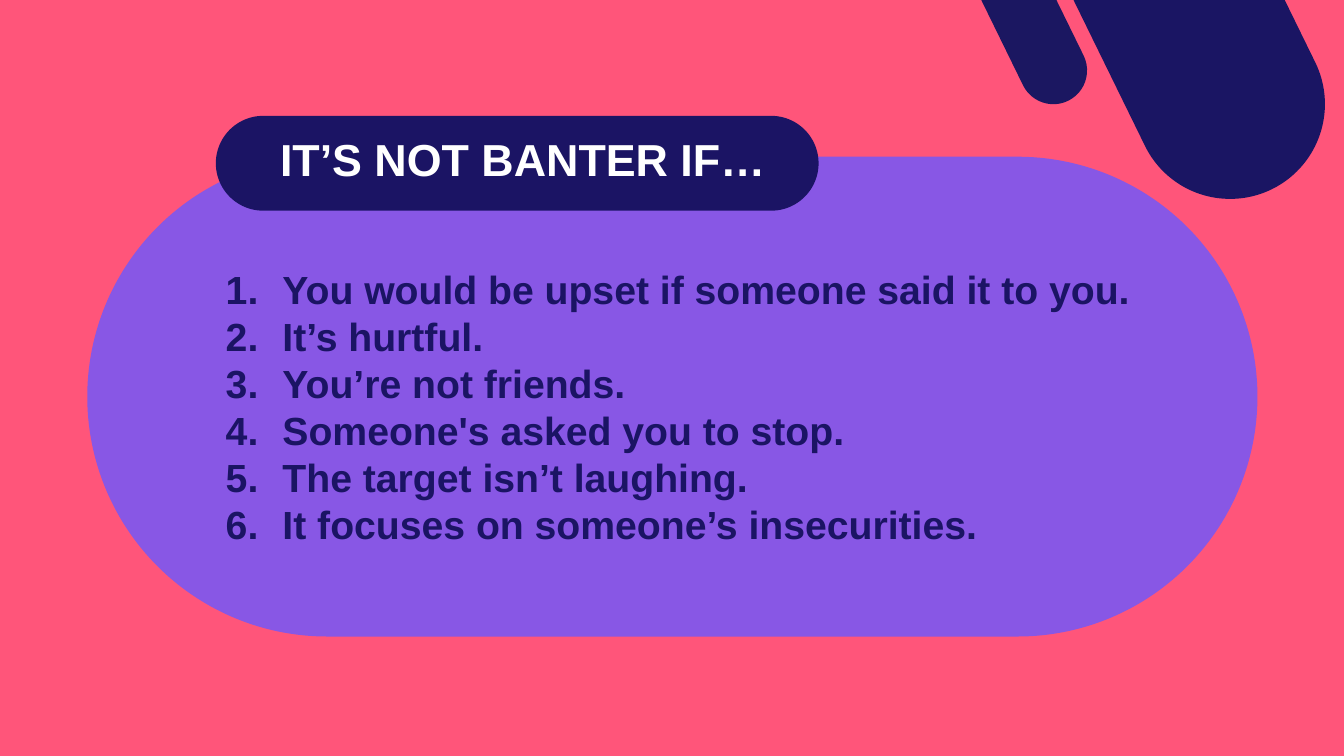
from lxml import etree
from pptx import Presentation
from pptx.dml.color import RGBColor
from pptx.enum.shapes import MSO_SHAPE
from pptx.enum.text import MSO_AUTO_SIZE, PP_ALIGN
from pptx.oxml.ns import qn
from pptx.util import Cm, Pt

PINK, PURPLE, NAVY, WHITE = "FF557A", "8857E5", "1B1464", "FFFFFF"
SIGNS = [
    "You would be upset if someone said it to you.",
    "It’s hurtful.",
    "You’re not friends.",
    "Someone's asked you to stop.",
    "The target isn’t laughing.",
    "It focuses on someone’s insecurities.",
]


def color(value):
    return RGBColor.from_string(value)


class Slide:
    font = "Arial"
    number_indent = Cm(1.43)

    def __init__(self, deck, background):
        self.page = deck.slides.add_slide(deck.slide_layouts[6])
        fill = self.page.background.fill
        fill.solid()
        fill.fore_color.rgb = color(background)

    def pill(self, left, top, width, height, fill, rotation=0):
        shape = self.page.shapes.add_shape(
            MSO_SHAPE.ROUNDED_RECTANGLE, Cm(left), Cm(top), Cm(width), Cm(height))
        shape.adjustments[0] = 0.5
        shape.rotation = rotation
        shape.shadow.inherit = False
        shape.fill.solid()
        shape.fill.fore_color.rgb = color(fill)
        shape.line.fill.background()

    def text(self, left, top, width, height, lines, size, ink, align=PP_ALIGN.LEFT):
        box = self.page.shapes.add_textbox(Cm(left), Cm(top), Cm(width), Cm(height))
        frame = box.text_frame
        frame.word_wrap = True
        frame.auto_size = MSO_AUTO_SIZE.SHAPE_TO_FIT_TEXT
        frame.text = "\n".join(lines)
        for para in frame.paragraphs:
            para.alignment = align
            for span in para.runs:
                span.font.name = self.font
                span.font.size = Pt(size)
                span.font.bold = True
                span.font.color.rgb = color(ink)
        return frame

    def numbered_list(self, left, top, width, height, lines, size, ink):
        frame = self.text(left, top, width, height, lines, size, ink)
        for para in frame.paragraphs:
            properties = para._p.get_or_add_pPr()
            properties.set("marL", str(self.number_indent))
            properties.set("indent", str(-self.number_indent))
            etree.SubElement(properties, qn("a:buFont"), typeface="+mj-lt")
            etree.SubElement(properties, qn("a:buAutoNum"), type="arabicPeriod")


def main():
    deck = Presentation()
    deck.slide_width, deck.slide_height = Cm(33.87), Cm(19.05)
    slide = Slide(deck, PINK)
    slide.pill(2.2, 3.95, 29.49, 12.09, PURPLE)
    slide.pill(26.8, -7.57, 4.78, 13, "1A1563", rotation=153.9)
    slide.pill(23.95, -6.6, 1.7, 9.63, "1B1761", rotation=153.9)
    slide.pill(5.44, 2.92, 15.19, 2.39, NAVY)
    slide.text(1.7, 3.2, 22.96, 1.63, ["IT’S NOT BANTER IF…"], 32, WHITE, PP_ALIGN.CENTER)
    slide.numbered_list(5.44, 6.55, 26.67, 7.44, SIGNS, 28, NAVY)
    deck.save("out.pptx")


if __name__ == "__main__":
    main()
